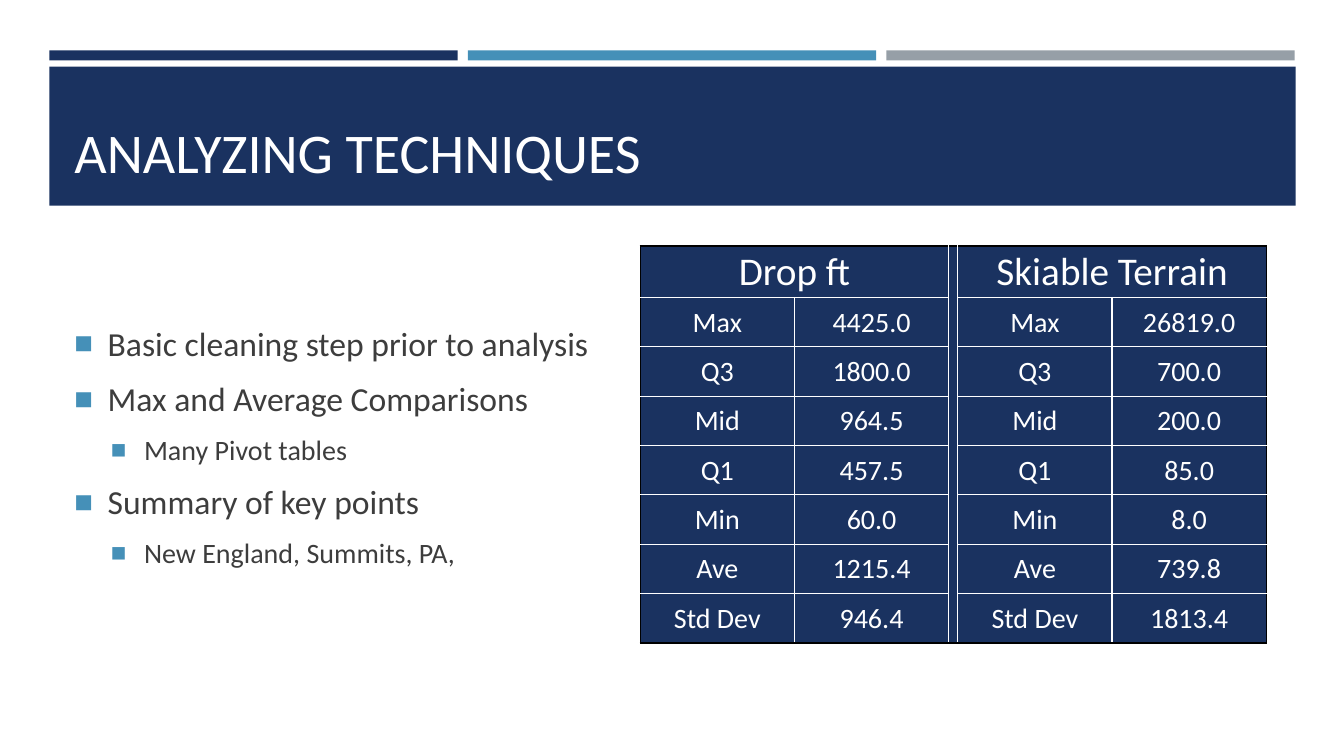
from lxml.etree import SubElement
from pptx import Presentation
from pptx.dml.color import RGBColor
from pptx.enum.shapes import MSO_SHAPE
from pptx.enum.text import MSO_ANCHOR, PP_ALIGN
from pptx.oxml.ns import qn
from pptx.util import Inches, Pt

TITLE = "ANALYZING TECHNIQUES"
BULLETS = [
    (0, "Basic cleaning step prior to analysis"),
    (0, "Max and Average Comparisons"),
    (1, "Many Pivot tables"),
    (0, "Summary of key points"),
    (1, "New England, Summits, PA,"),
]
HEADINGS = ("Drop ft", "Skiable Terrain")
STATISTICS = [
    ("Max", "4425.0", "26819.0"),
    ("Q3", "1800.0", "700.0"),
    ("Mid", "964.5", "200.0"),
    ("Q1", "457.5", "85.0"),
    ("Min", "60.0", "8.0"),
    ("Ave", "1215.4", "739.8"),
    ("Std Dev", "946.4", "1813.4"),
]
COLORS = {"navy": "1A3260", "blue": "4590B8", "gray": "969FA7",
          "text": "3D3D3D", "white": "FFFFFF", "black": "000000"}
FONT = "Calibri"

SLIDE_WIDTH, SLIDE_HEIGHT = 13.33, 7.5
MARGIN, BAND_WIDTH = 0.49, 12.36
STRIPES = ("navy", "blue", "gray")
STRIPE_WIDTH, STRIPE_GAP = 4.05, 0.1
CONTENT_LEFT, CONTENT_TOP, CONTENT_HEIGHT = 0.64, 2.44, 3.97
TABLE_LEFT = 6.35
COLUMN_WIDTHS = (1.53, 1.53, 0.09, 1.53, 1.53)
DIVIDER = 2
ROW_HEIGHTS = [0.51] + [0.49] * len(STATISTICS)
BULLET_SIZES = (24, 20)
BULLET_INDENTS = (0.33, 0.69)


def color(name):
    return RGBColor.from_string(COLORS[name])


def add_bar(slide, left, top, width, height, fill):
    bar = slide.shapes.add_shape(MSO_SHAPE.RECTANGLE, *map(Inches, (left, top, width, height)))
    bar.shadow.inherit = False
    bar.fill.solid()
    bar.fill.fore_color.rgb = color(fill)
    bar.line.fill.background()


def add_text_frame(slide, left, top, width, height, anchor):
    frame = slide.shapes.add_textbox(*map(Inches, (left, top, width, height))).text_frame
    frame.word_wrap = True
    frame.vertical_anchor = anchor
    return frame


def write(paragraph, text, size, color_name):
    run = paragraph.add_run()
    run.text = text
    run.font.color.rgb = color(color_name)
    for name, value in {"name": FONT, "size": Pt(size)}.items():
        setattr(run.font, name, value)


def add_bullet(paragraph, level):
    properties = paragraph._p.get_or_add_pPr()
    properties.set("marL", str(Inches(BULLET_INDENTS[level])))
    properties.set("indent", str(-Inches(BULLET_INDENTS[0])))
    bullet_color = SubElement(properties, qn("a:buClr"))
    SubElement(bullet_color, qn("a:srgbClr"), val=COLORS["blue"])
    SubElement(properties, qn("a:buSzPct"), val="92000")
    SubElement(properties, qn("a:buFont"), typeface="Arial")
    SubElement(properties, qn("a:buChar"), char="■")


def set_borders(cell, row, column):
    """Draw black lines on the table's outer edges and white ones inside."""
    outer = {
        "L": column == 0,
        "R": column + cell.span_width == len(COLUMN_WIDTHS),
        "T": row == 0,
        "B": row + cell.span_height == len(ROW_HEIGHTS),
    }
    properties = cell._tc.get_or_add_tcPr()
    for index, (side, is_outer) in enumerate(outer.items()):
        line = SubElement(properties, qn("a:ln" + side), w=str(Pt(1)))
        fill = SubElement(line, qn("a:solidFill"))
        SubElement(fill, qn("a:srgbClr"), val=COLORS["black" if is_outer else "white"])
        properties.insert(index, line)


def add_header(slide):
    for index, fill in enumerate(STRIPES):
        add_bar(slide, MARGIN + index * (STRIPE_WIDTH + STRIPE_GAP), 0.5, STRIPE_WIDTH, 0.1, fill)
    add_bar(slide, MARGIN, 0.66, BAND_WIDTH, 1.38, "navy")
    frame = add_text_frame(slide, CONTENT_LEFT, 0.8, 12.06, 1.08, MSO_ANCHOR.BOTTOM)
    write(frame.paragraphs[0], TITLE, 40, "white")


def add_bullets(slide):
    frame = add_text_frame(slide, CONTENT_LEFT, CONTENT_TOP, 5.93, CONTENT_HEIGHT, MSO_ANCHOR.MIDDLE)
    for index, (level, text) in enumerate(BULLETS):
        paragraph = frame.add_paragraph() if index else frame.paragraphs[0]
        size = BULLET_SIZES[level]
        paragraph.level = level
        paragraph.space_before = Pt(0.2 * size)
        paragraph.space_after = Pt(6)
        add_bullet(paragraph, level)
        write(paragraph, text, size, "text")


def add_statistics(slide):
    table = slide.shapes.add_table(
        len(ROW_HEIGHTS), len(COLUMN_WIDTHS), Inches(TABLE_LEFT), Inches(CONTENT_TOP),
        Inches(sum(COLUMN_WIDTHS)), Inches(CONTENT_HEIGHT)).table
    for column, width in zip(table.columns, COLUMN_WIDTHS):
        column.width = Inches(width)
    for row, height in zip(table.rows, ROW_HEIGHTS):
        row.height = Inches(height)

    for first in (0, DIVIDER + 1):
        table.cell(0, first).merge(table.cell(0, first + 1))
    table.cell(0, DIVIDER).merge(table.cell(len(STATISTICS), DIVIDER))

    grid = [(HEADINGS[0], "", "", HEADINGS[1], "")]
    grid += [(label, drop, "", label, terrain) for label, drop, terrain in STATISTICS]
    cell_format = {"margin_left": Inches(0.01), "margin_right": Inches(0.01),
                   "margin_top": Inches(0.01), "margin_bottom": 0,
                   "vertical_anchor": MSO_ANCHOR.MIDDLE}
    for row, texts in enumerate(grid):
        for column, text in enumerate(texts):
            cell = table.cell(row, column)
            for name, value in cell_format.items():
                setattr(cell, name, value)
            cell.fill.solid()
            cell.fill.fore_color.rgb = color("navy")
            if not cell.is_spanned:
                set_borders(cell, row, column)
            if text:
                paragraph = cell.text_frame.paragraphs[0]
                paragraph.alignment = PP_ALIGN.CENTER
                write(paragraph, text, 20 if row else 28, "white")


def main():
    presentation = Presentation()
    presentation.slide_width = Inches(SLIDE_WIDTH)
    presentation.slide_height = Inches(SLIDE_HEIGHT)
    slide = presentation.slides.add_slide(presentation.slide_layouts[6])
    add_header(slide)
    add_bullets(slide)
    add_statistics(slide)
    presentation.save("out.pptx")


if __name__ == "__main__":
    main()
